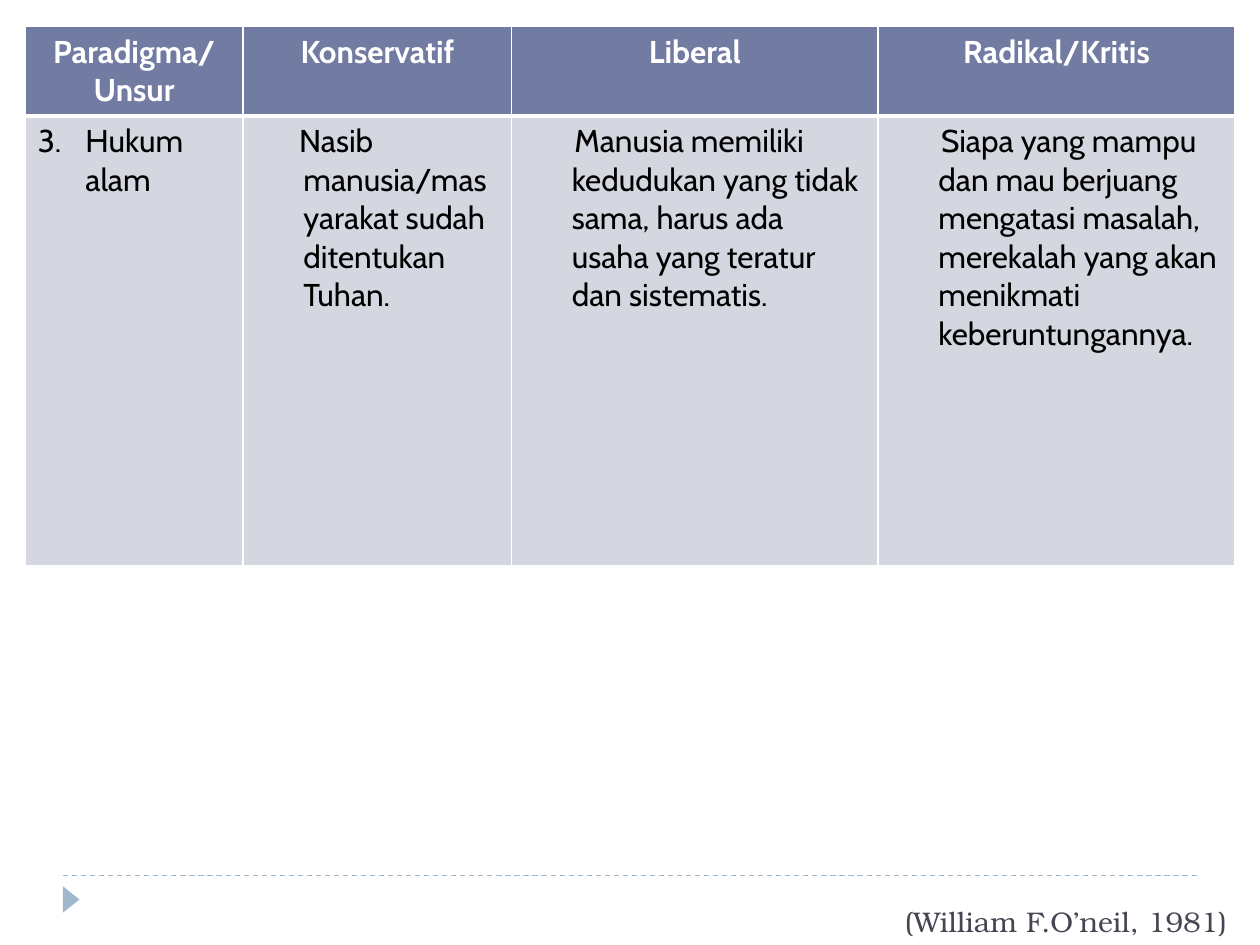
from lxml import etree
from pptx import Presentation
from pptx.dml.color import RGBColor
from pptx.enum import dml, shapes, text
from pptx.oxml import ns
from pptx.util import Pt

WHITE = RGBColor(0xFF, 0xFF, 0xFF)
BLACK = RGBColor(0, 0, 0)
HEADER_FILL = RGBColor(0x72, 0x7C, 0xA3)
BODY_FILL = RGBColor(0xD5, 0xD7, 0xE0)
ACCENT = RGBColor(0x9F, 0xB8, 0xCD)
SOURCE_COLOR = RGBColor(0x46, 0x46, 0x53)

COLUMN_WIDTHS = (124.6, 153.4, 209.5, 203.8)
ROW_HEIGHTS = (50, 257)
HEADINGS = ("Paradigma/Unsur", "Konservatif", "Liberal", "Radikal/Kritis")
HANGING = 27.2
ASPECTS = (
    ("Hukum alam", -HANGING),
    ("Nasib manusia/masyarakat sudah ditentukan Tuhan.", -2.5),
    ("Manusia memiliki kedudukan yang tidak sama, harus ada usaha yang "
     "teratur dan sistematis.", 1.5),
    ("Siapa yang mampu dan mau berjuang mengatasi masalah, merekalah yang "
     "akan menikmati keberuntungannya.", 1.5),
)
ITEM_NUMBER = 3
HEADER_FONT = {"name": "Cabin", "size": Pt(18), "bold": True}
BODY_FONT = {**HEADER_FONT, "bold": False}
SOURCE_FONT = {"name": "TeX Gyre Bonum", "size": Pt(16.2), "bold": False}


def format_font(font, values, color):
    """Apply a dict of font values and a colour."""
    for attribute, value in values.items():
        setattr(font, attribute, value)
    font.color.rgb = color


def add_xml(parent, tag, **attributes):
    """Append a DrawingML child element and return it."""
    return etree.SubElement(parent, ns.qn(f"a:{tag}"), attributes)


def border_cell(cell, widths):
    """Draw white borders of the given widths, keyed by side."""
    properties = cell._tc.get_or_add_tcPr()
    for side, width in widths.items():
        border = add_xml(properties, f"ln{side}", w=str(Pt(width)))
        add_xml(add_xml(border, "solidFill"), "srgbClr", val=str(WHITE))


def fill_cell(cell, wording, fill, font_values, color):
    """Write one cell's wording and return its paragraph."""
    cell.fill.solid()
    cell.fill.fore_color.rgb = fill
    paragraph = cell.text_frame.paragraphs[0]
    run = paragraph.add_run()
    run.text = wording
    format_font(run.font, font_values, color)
    return paragraph


def add_paradigm_table(slide, left, top):
    """Place the table comparing the paradigms."""
    frame = slide.shapes.add_table(
        len(ROW_HEIGHTS), len(COLUMN_WIDTHS), Pt(left), Pt(top),
        Pt(sum(COLUMN_WIDTHS)), Pt(sum(ROW_HEIGHTS)))
    table = frame.table
    for column, width in zip(table.columns, COLUMN_WIDTHS):
        column.width = Pt(width)
    for row, height in zip(table.rows, ROW_HEIGHTS):
        row.height = Pt(height)

    for index, (heading, (aspect, indent)) in enumerate(zip(HEADINGS, ASPECTS)):
        header, body = table.cell(0, index), table.cell(1, index)
        border_cell(header, {"L": 1, "R": 1, "T": 1, "B": 3})
        border_cell(body, {"L": 1, "R": 1, "T": 3, "B": 1})
        title = fill_cell(header, heading, HEADER_FILL, HEADER_FONT, WHITE)
        title.alignment = text.PP_ALIGN.CENTER
        entry = fill_cell(body, aspect, BODY_FILL, BODY_FONT, BLACK)
        layout = entry._p.get_or_add_pPr()
        layout.set("marL", str(Pt(HANGING)))
        layout.set("indent", str(Pt(indent)))
        if index == 0:
            add_xml(layout, "buAutoNum", type="arabicPeriod",
                    startAt=str(ITEM_NUMBER))


def add_footer_rule(slide, left, top, width):
    """Place the dashed rule with the small pointer below its left end."""
    rule = slide.shapes.add_connector(
        shapes.MSO_CONNECTOR.STRAIGHT, Pt(left), Pt(top), Pt(left + width), Pt(top))
    rule.line.color.rgb = ACCENT
    rule.line.width = Pt(0.75)
    rule.line.dash_style = dml.MSO_LINE.DASH
    add_xml(rule._element.spPr, "effectLst")

    pointer = slide.shapes.add_shape(
        shapes.MSO_SHAPE.ISOSCELES_TRIANGLE,
        Pt(left - 2.9), Pt(top + 8.9), Pt(15.1), Pt(9.4))
    pointer.rotation = 90
    pointer.shadow.inherit = False
    pointer.fill.solid()
    pointer.fill.fore_color.rgb = ACCENT
    pointer.line.fill.background()


def place_source(slide, left, top, width, height):
    """Place the title holding the source reference."""
    source = slide.shapes.title
    box = {"left": left, "top": top, "width": width, "height": height}
    for attribute, value in box.items():
        setattr(source, attribute, Pt(value))
    frame = source.text_frame
    frame.text = "(William F.O’neil, 1981)"
    frame.auto_size = text.MSO_AUTO_SIZE.NONE
    frame.vertical_anchor = text.MSO_ANCHOR.BOTTOM
    paragraph = frame.paragraphs[0]
    paragraph.alignment = text.PP_ALIGN.LEFT
    format_font(paragraph.runs[0].font, SOURCE_FONT, SOURCE_COLOR)


def main():
    """Build and save the slide."""
    deck = Presentation()
    deck.slide_width, deck.slide_height = Pt(720), Pt(540)
    slide = deck.slides.add_slide(deck.slide_layouts[5])
    add_footer_rule(slide, 36, 500.4, 648)
    place_source(slide, 509.8, 506.2, 210.2, 33.8)
    add_paradigm_table(slide, 14.4, 15.2)
    deck.save("out.pptx")


if __name__ == "__main__":
    main()
